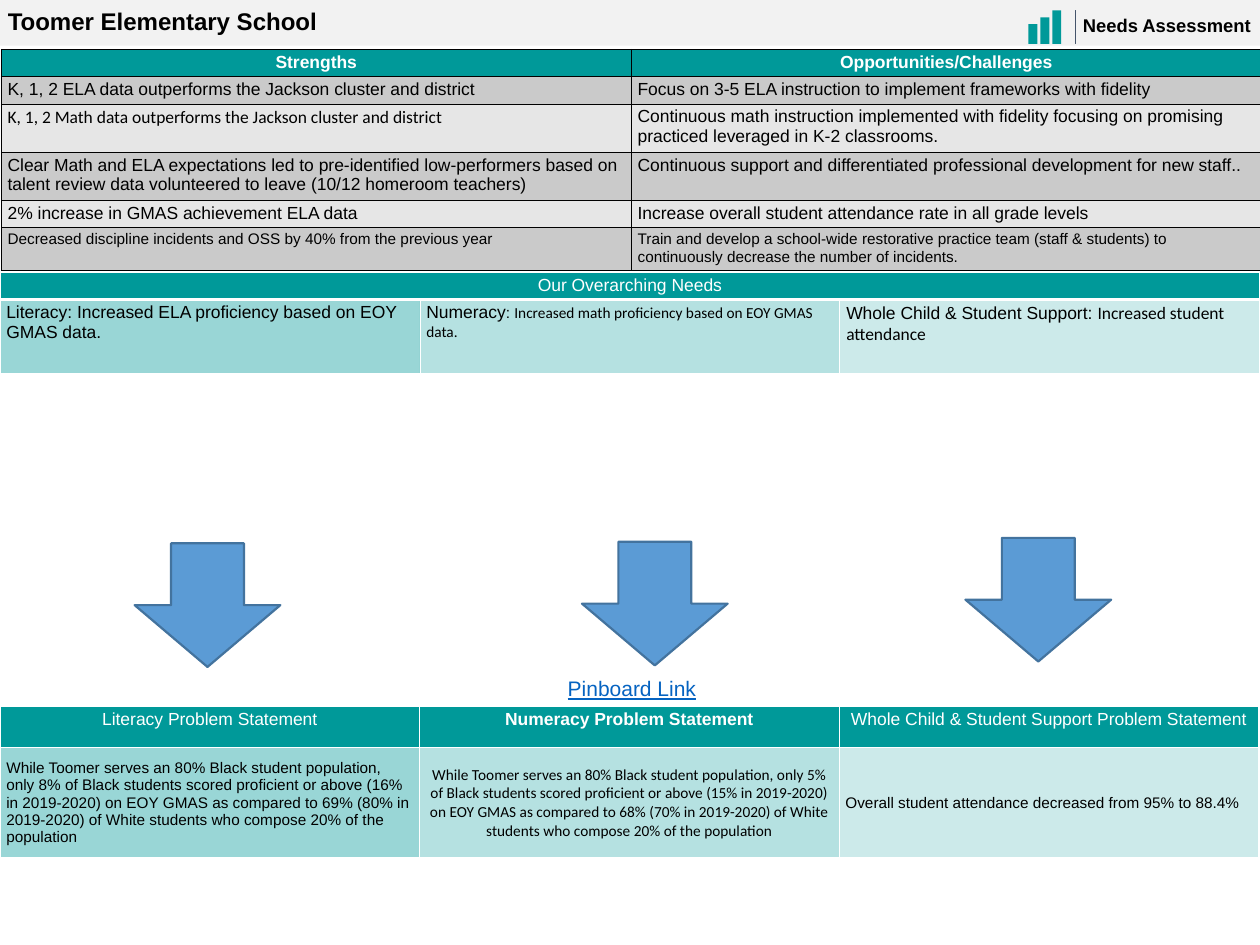
"""Build the needs assessment slide of Toomer Elementary School."""
from lxml.etree import SubElement
from pptx import Presentation
from pptx.dml.color import RGBColor
from pptx.enum.shapes import MSO_SHAPE as SHAPE
from pptx.enum.text import MSO_ANCHOR as ANCHOR, PP_ALIGN as ALIGN
from pptx.oxml.ns import qn
from pptx.util import Pt

COLORS = {
    "teal": "009999", "band": "F2F2F2", "slate": "44546A", "black": "000000",
    "white": "FFFFFF", "dark row": "CACACA", "light row": "E6E6E6",
    "arrow": "5B9BD5", "arrow edge": "43739E", "link": "0563C1",
}
COLUMN_ALPHAS = [40, 29, 20]


def write(frame, spans, color, bold=False, align=ALIGN.LEFT, anchor=ANCHOR.TOP):
    """Fill a text frame with one paragraph of (text, size, font) spans."""
    frame.word_wrap = True
    frame.vertical_anchor = anchor
    para = frame.paragraphs[0]
    para.alignment = align
    for text, size, name in spans:
        span = para.add_run()
        span.text = text
        span.font.size = Pt(size)
        span.font.name = name
        span.font.bold = bold
        span.font.color.rgb = RGBColor.from_string(COLORS[color])


def dress(cell, fill, edge, top=1, bottom=1, alpha=100):
    """Give a table cell its margins, borders and fill."""
    cell.margin_left = cell.margin_right = Pt(5.76)
    cell.margin_top = cell.margin_bottom = Pt(2.88)
    properties = cell._tc.get_or_add_tcPr()
    for tag, width in (("a:lnL", 1), ("a:lnR", 1), ("a:lnT", top), ("a:lnB", bottom)):
        line = SubElement(properties, qn(tag), w=str(Pt(width)))
        solid = SubElement(line, qn("a:solidFill"))
        SubElement(solid, qn("a:srgbClr"), val=COLORS[edge])
    cell.fill.solid()
    cell.fill.fore_color.rgb = RGBColor.from_string(COLORS[fill])
    if alpha < 100:
        tint = properties.find(qn("a:solidFill")).find(qn("a:srgbClr"))
        SubElement(tint, qn("a:alpha"), val=str(alpha * 1000))


deck = Presentation()
deck.slide_width, deck.slide_height = Pt(1152), Pt(864)
page = deck.slides.add_slide(deck.slide_layouts[6])

plain_shapes = [(SHAPE.RECTANGLE, 0, -3.6, 1152, 45.4, "band", None, 0)]
for index, height in enumerate([18, 24.2, 30.5]):
    plain_shapes.append(
        (SHAPE.RECTANGLE, 940.3 + 10.9 * index, 40.1 - height, 8.2, height, "teal", None, 0))
plain_shapes.append((SHAPE.RECTANGLE, 982.9, 9.6, 0.5, 30.5, "slate", "slate", 0.75))
for left, top in [(123.1, 496.8), (532.1, 495.4), (882.7, 491.8)]:
    plain_shapes.append((SHAPE.DOWN_ARROW, left, top, 133.2, 113, "arrow", "arrow edge", 2))

for kind, left, top, width, height, fill, edge, weight in plain_shapes:
    shape = page.shapes.add_shape(kind, Pt(left), Pt(top), Pt(width), Pt(height))
    shape.shadow.inherit = False
    shape.fill.solid()
    shape.fill.fore_color.rgb = RGBColor.from_string(COLORS[fill])
    if edge:
        shape.line.color.rgb = RGBColor.from_string(COLORS[edge])
        shape.line.width = Pt(weight)
    else:
        shape.line.fill.background()

labels = [
    ("Toomer Elementary School", 0, -3.6, 375.8, 45.4, 22, "black", True, ALIGN.LEFT, 7.2),
    ("Needs Assessment", 905.8, 0, 244.8, 45.4, 16.8, "black", True, ALIGN.RIGHT, 7.2),
    ("Pinboard Link", 326.9, 614.2, 501.8, 30.2, 19.2, "link", False, ALIGN.CENTER, 3.6),
]
for text, left, top, width, height, size, color, bold, align, margin in labels:
    box = page.shapes.add_textbox(Pt(left), Pt(top), Pt(width), Pt(height))
    frame = box.text_frame
    frame.margin_top = frame.margin_bottom = Pt(margin)
    write(frame, [(text, size, "Arial")], color, bold, align, ANCHOR.MIDDLE)
    if color == "link":
        frame.paragraphs[0].runs[0].font.underline = True

findings = [
    (24, 16, "Arial", "Strengths", "Opportunities/Challenges"),
    (24, 16, "Arial", "K, 1, 2 ELA data outperforms the Jackson cluster and district",
     "Focus on 3-5 ELA instruction to implement frameworks with fidelity"),
    (41, 16, "Calibri", "K, 1, 2 Math data outperforms the Jackson cluster and district",
     "Continuous math instruction implemented with fidelity focusing on promising "
     "practiced leveraged in K-2 classrooms."),
    (41, 16, "Arial", "Clear Math and ELA expectations led to pre-identified low-performers "
     "based on talent review data volunteered to leave (10/12 homeroom teachers)",
     "Continuous support and differentiated professional development for new staff.."),
    (24, 16, "Arial", "2% increase in GMAS achievement ELA data",
     "Increase overall student attendance rate in all grade levels"),
    (37, 14, "Arial", "Decreased discipline incidents and OSS by 40% from the previous year",
     "Train and develop a school-wide restorative practice team (staff & students) to "
     "continuously decrease the number of incidents."),
]
findings_table = page.shapes.add_table(
    len(findings), 2, Pt(1.2), Pt(45.2), Pt(1152), Pt(191)).table
for row, (height, size, left_font, strength, challenge) in enumerate(findings):
    findings_table.rows[row].height = Pt(height)
    is_header = row == 0
    fill = "teal" if is_header else "dark row" if row % 2 else "light row"
    for column, (text, name) in enumerate([(strength, left_font), (challenge, "Arial")]):
        cell = findings_table.cell(row, column)
        dress(cell, fill, "black")
        write(cell.text_frame, [(text, size, name)], "white" if is_header else "black",
              is_header, ALIGN.CENTER if is_header else ALIGN.LEFT)

needs = [
    [("Literacy: Increased ELA proficiency based on EOY GMAS data.", 16, "Arial")],
    [("Numeracy", 16, "Arial"), (": ", 14, "Arial"),
     ("Increased math proficiency based on EOY GMAS data.", 14, "Calibri")],
    [("Whole Child & Student Support: ", 16, "Arial"),
     ("Increased student attendance", 16, "Calibri")],
]
needs_table = page.shapes.add_table(2, 3, Pt(0), Pt(249.1), Pt(1152), Pt(91)).table
needs_table.rows[0].height, needs_table.rows[1].height = Pt(24), Pt(67)
for column, (spans, alpha) in enumerate(zip(needs, COLUMN_ALPHAS)):
    dress(needs_table.cell(0, column), "teal", "white", bottom=3)
    need = needs_table.cell(1, column)
    dress(need, "teal", "white", top=3, alpha=alpha)
    write(need.text_frame, spans, "black")
heading = needs_table.cell(0, 0)
heading.merge(needs_table.cell(0, 2))
write(heading.text_frame, [("Our Overarching Needs", 16, "Arial")], "white", align=ALIGN.CENTER)

problems = [
    ("Literacy Problem Statement", False, "Arial", ALIGN.LEFT,
     "While Toomer serves an 80% Black student population, only 8% of Black students scored "
     "proficient or above (16% in 2019-2020) on EOY GMAS as compared to 69% (80% in 2019-2020) "
     "of White students who compose 20% of the population"),
    ("Numeracy Problem Statement", True, "Calibri", ALIGN.CENTER,
     "While Toomer serves an 80% Black student population, only 5% of Black students scored "
     "proficient or above (15% in 2019-2020) on EOY GMAS as compared to 68% (70% in 2019-2020) "
     "of White students who compose 20% of the population"),
    ("Whole Child & Student Support Problem Statement", False, "Arial", ALIGN.LEFT,
     "Overall student attendance decreased from 95% to 88.4%"),
]
problems_table = page.shapes.add_table(2, 3, Pt(0), Pt(645.8), Pt(1150.8), Pt(139)).table
problems_table.rows[0].height, problems_table.rows[1].height = Pt(37.5), Pt(101.5)
for column, (title, bold, name, align, statement) in enumerate(problems):
    top_cell, body_cell = problems_table.cell(0, column), problems_table.cell(1, column)
    dress(top_cell, "teal", "white")
    write(top_cell.text_frame, [(title, 16, "Arial")], "white", bold, ALIGN.CENTER)
    dress(body_cell, "teal", "white", bottom=3, alpha=COLUMN_ALPHAS[column])
    write(body_cell.text_frame, [(statement, 14, name)], "black", align=align)
    body_cell.vertical_anchor = ANCHOR.MIDDLE

deck.save("out.pptx")
